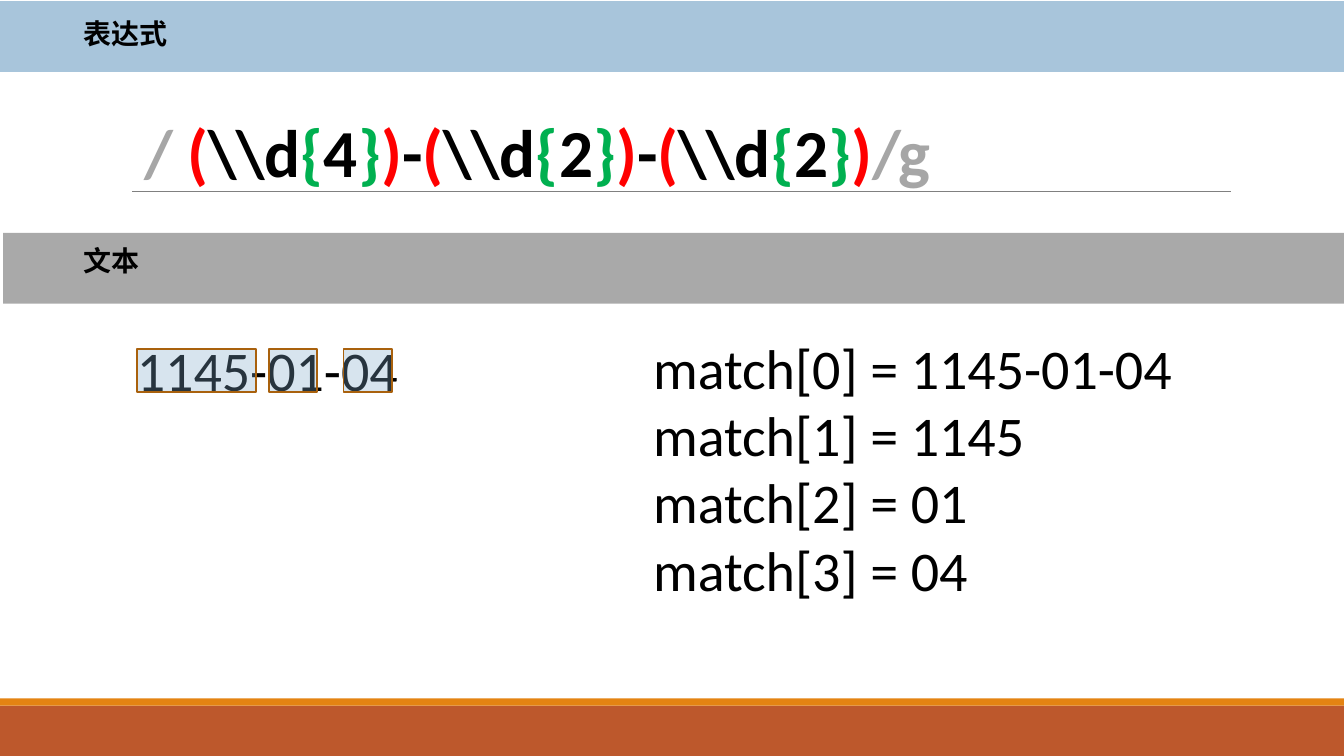
import itertools

import pptx
import pptx.dml.color
import pptx.enum.shapes
import pptx.enum.text
import pptx.oxml.ns
import pptx.oxml.xmlchemy
import pptx.util

Cm = pptx.util.Cm
Pt = pptx.util.Pt
WIDE = 33.87
make = pptx.oxml.xmlchemy.OxmlElement
tone = pptx.dml.color.RGBColor.from_string

deck = pptx.Presentation()
deck.slide_width, deck.slide_height = Cm(WIDE), Cm(19.05)
slide = deck.slides.add_slide(deck.slide_layouts[5])
shapes = slide.shapes


def block(left, top, width, height, fill, alpha=100, line=None):
    """Add a rectangle; alpha is its opacity in percent."""
    rect = shapes.add_shape(pptx.enum.shapes.MSO_SHAPE.RECTANGLE,
                            Cm(left), Cm(top), Cm(width), Cm(height))
    rect.shadow.inherit = False
    rect.fill.solid()
    rect.fill.fore_color.rgb = tone(fill)
    if alpha < 100:
        tint = rect._element.spPr.find(".//" + pptx.oxml.ns.qn("a:srgbClr"))
        node = make("a:alpha")
        node.set("val", str(alpha * 1000))
        tint.append(node)
    if line:
        rect.line.color.rgb = tone(line)
        rect.line.width = Pt(1.25)
    else:
        rect.line.fill.background()


def write(para, text, size=40, font="Calibri", color="000000", bold=False, space=0):
    """Add a run to a paragraph; space is letter spacing in points."""
    run = para.add_run()
    run.text = text
    run.font.size, run.font.name, run.font.bold = Pt(size), font, bold
    run.font.color.rgb = tone(color)
    props = run._r.get_or_add_rPr()
    if space:
        props.set("spc", str(int(space * 100)))
    east = make("a:ea")
    east.set("typeface", font)
    props.find(pptx.oxml.ns.qn("a:latin")).addnext(east)


# Footer bands and title rule
block(0, 17.78, WIDE, 1.27, "BD582C")
block(0, 17.6, WIDE, 0.18, "E48312")
rule = shapes.add_connector(pptx.enum.shapes.MSO_CONNECTOR.STRAIGHT,
                            Cm(3.33), Cm(4.82), Cm(31.01), Cm(4.82))
rule.line.color.rgb = tone("808080")
rule.line.width = Pt(0.5)
rule._element.spPr.append(make("a:effectLst"))

# Expression as title, coloured by the kind of character
title = shapes.title
title.left, title.top, title.width, title.height = Cm(3.38), Cm(0.91), Cm(27.94), Cm(4.04)
frame = title.text_frame
frame.word_wrap = True
frame.auto_size = pptx.enum.text.MSO_AUTO_SIZE.NONE
frame.vertical_anchor = pptx.enum.text.MSO_ANCHOR.BOTTOM
head = frame.paragraphs[0]
head.alignment = pptx.enum.text.PP_ALIGN.LEFT
head.line_spacing = 0.85
hues = {"/": "A6A6A6", "g": "A6A6A6", " ": "FF0000", "(": "FF0000", ")": "FF0000",
        "{": "00B050", "}": "00B050"}
regex = r"/ (\\d{4})-(\\d{2})-(\\d{2})/g"
for hue, part in itertools.groupby(regex, lambda sign: hues.get(sign, "000000")):
    write(head, "".join(part), size=48, color=hue, bold=True, space=-0.5)

# Section bands
block(0.08, 5.87, WIDE, 1.78, "808080", alpha=67)
block(0, 0.03, WIDE, 1.78, "7EA9CA", alpha=67)

# Labels, sample text and matches
label = {"size": 20, "font": "Noto Sans CJK SC", "bold": True}
texts = [
    (1.85, 0.3, 2.67, 1.12, ["表达式"], label),
    (1.85, 6.02, 1.93, 1.12, ["文本"], label),
    (3.2, 8.33, 7.16, 1.96, ["1145-01-04"], {}),
    (16.21, 8.28, 13.72, 8.81,
     ["match[0] = 1145-01-04", "match[1] = 1145", "match[2] = 01", "match[3] = 04"], {}),
]
for left, top, width, height, lines, style in texts:
    frame = shapes.add_textbox(Cm(left), Cm(top), Cm(width), Cm(height)).text_frame
    frame.word_wrap = False
    frame.auto_size = pptx.enum.text.MSO_AUTO_SIZE.SHAPE_TO_FIT_TEXT
    for row, line in enumerate(lines):
        para = frame.add_paragraph() if row else frame.paragraphs[0]
        write(para, line, **style)

# Marks over the captured groups
for left, width in [(3.45, 3), (6.78, 1.22), (8.66, 1.22)]:
    block(left, 8.79, width, 1.09, "7EA9CA", alpha=31, line="A9610D")

deck.save("out.pptx")
